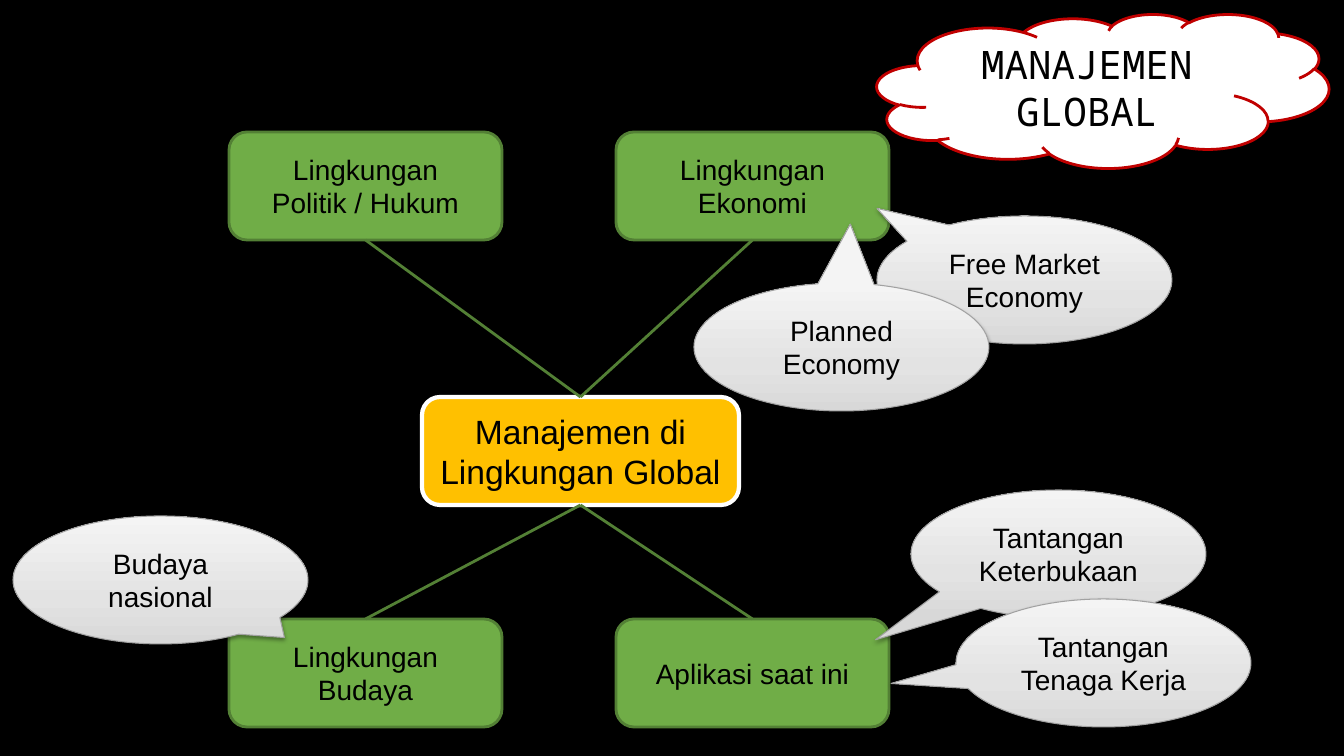
from copy import deepcopy

from lxml import etree
from pptx import Presentation
from pptx.dml.color import RGBColor
from pptx.enum.shapes import MSO_CONNECTOR, MSO_SHAPE
from pptx.enum.text import MSO_ANCHOR, PP_ALIGN
from pptx.oxml.ns import qn
from pptx.util import Emu, Pt

CLOUD = MSO_SHAPE.CLOUD
ROUNDED = MSO_SHAPE.ROUNDED_RECTANGLE
CALLOUT = MSO_SHAPE.OVAL_CALLOUT
STRAIGHT = MSO_CONNECTOR.STRAIGHT
CENTER = PP_ALIGN.CENTER
MIDDLE = MSO_ANCHOR.MIDDLE

EMU_PER_PX = 914400 / 100.8
SLIDE_SIZE = (1344, 756)
TOP_SITE, BOTTOM_SITE = 0, 2

BLACK, WHITE, RED, AMBER = "000000", "FFFFFF", "C00000", "FFC000"
GREEN, DARK_GREEN, GRAY = "70AD47", "538035", "A1A1A1"
BUBBLE_STOPS = [(0, "D8D8D8"), (0.35, "E3E3E3"), (1, "F4F4F4")]

HUB_AREA = (422, 397, 317, 108)
LEFT_COLUMN, RIGHT_COLUMN = 229, 616
UPPER_ROW, LOWER_ROW = 132, 619
TOPIC_SIZE = (273, 108)
TOPICS = [
    ("Aplikasi saat ini", RIGHT_COLUMN, LOWER_ROW),
    ("Lingkungan Budaya", LEFT_COLUMN, LOWER_ROW),
    ("Lingkungan Politik / Hukum", LEFT_COLUMN, UPPER_ROW),
    ("Lingkungan Ekonomi", RIGHT_COLUMN, UPPER_ROW),
]

BUBBLE_SIZE = (295, 128)
# Text, left and top, tip of the tail as a share of the bubble's size
BUBBLES = [
    ("Free Market Economy", (877, 216), (-0.5, -0.56)),
    ("Planned Economy", (694, 283), (0.03, -0.96)),
    ("Budaya nasional", (13, 516), (0.42, 0.45)),
    ("Tantangan Keterbukaan", (911, 490), (-0.62, 0.67)),
    ("Tantangan Tenaga Kerja", (956, 599), (-0.72, 0.16)),
]


def px(length):
    return Emu(round(length * EMU_PER_PX))


def color(hex_code):
    return RGBColor.from_string(hex_code)


def write_text(shape, text, size=20, font="Arial", text_color=BLACK):
    frame = shape.text_frame
    frame.word_wrap = True
    frame.vertical_anchor = MIDDLE
    paragraph = frame.paragraphs[0]
    paragraph.alignment = CENTER
    run = paragraph.add_run()
    run.text = text
    run.font.size = Pt(size)
    run.font.name = font
    run.font.color.rgb = color(text_color)


def add_figure(slide, kind, area, fill, outline, outline_width):
    figure = slide.shapes.add_shape(kind, *map(px, area))
    figure.shadow.inherit = False
    figure.fill.solid()
    figure.fill.fore_color.rgb = color(fill)
    figure.line.color.rgb = color(outline)
    figure.line.width = Pt(outline_width)
    return figure


def cast_shadow(figure):
    """Give the figure a soft black shadow straight below it."""
    effects = figure.element.spPr.find(qn("a:effectLst"))
    shadow = etree.SubElement(effects, qn("a:outerShdw"), blurRad=str(Pt(3.1)),
                              dist=str(Pt(1.6)), dir="5400000", rotWithShape="0")
    tint = etree.SubElement(shadow, qn("a:srgbClr"), val=BLACK)
    etree.SubElement(tint, qn("a:alpha"), val="38000")


def shade_upward(figure, stops):
    """Fill with a three-stop gradient that runs from bottom to top."""
    fill = figure.fill
    fill.gradient()
    fill.gradient_angle = 90
    stop_list = figure.element.spPr.find(qn("a:gradFill")).find(qn("a:gsLst"))
    stop_list.insert(1, deepcopy(stop_list[0]))
    for stop, (position, hex_code) in zip(fill.gradient_stops, stops):
        stop.position = position
        stop.color.rgb = color(hex_code)


def add_topic(slide, text, left, top):
    topic = add_figure(slide, ROUNDED, (left, top, *TOPIC_SIZE), GREEN, DARK_GREEN, 2)
    write_text(topic, text)
    return topic


def add_link(slide, hub, topic):
    upper, lower = sorted((hub, topic), key=lambda box: box.top)
    link = slide.shapes.add_connector(STRAIGHT, 0, 0, 0, 0)
    link.begin_connect(upper, BOTTOM_SITE)
    link.end_connect(lower, TOP_SITE)
    link.line.color.rgb = color(DARK_GREEN)
    link.line.width = Pt(2)
    etree.SubElement(link.element.spPr, qn("a:effectLst"))


def add_bubble(slide, text, corner, tip):
    bubble = add_figure(slide, CALLOUT, (*corner, *BUBBLE_SIZE), WHITE, GRAY, 0.75)
    bubble.adjustments[0], bubble.adjustments[1] = tip
    shade_upward(bubble, BUBBLE_STOPS)
    cast_shadow(bubble)
    write_text(bubble, text)


def main():
    deck = Presentation()
    deck.slide_width, deck.slide_height = map(px, SLIDE_SIZE)
    slide = deck.slides.add_slide(deck.slide_layouts[6])
    slide.background.fill.solid()
    slide.background.fill.fore_color.rgb = color(BLACK)

    title = add_figure(slide, CLOUD, (877, 14, 452, 154), WHITE, RED, 2)
    write_text(title, "MANAJEMEN GLOBAL", size=28, font="Noto Sans Mono")

    hub = add_figure(slide, ROUNDED, HUB_AREA, AMBER, WHITE, 3)
    cast_shadow(hub)
    write_text(hub, "Manajemen di Lingkungan Global", size=24)

    for text, left, top in TOPICS:
        add_link(slide, hub, add_topic(slide, text, left, top))
    for text, corner, tip in BUBBLES:
        add_bubble(slide, text, corner, tip)

    deck.save("out.pptx")


if __name__ == "__main__":
    main()
